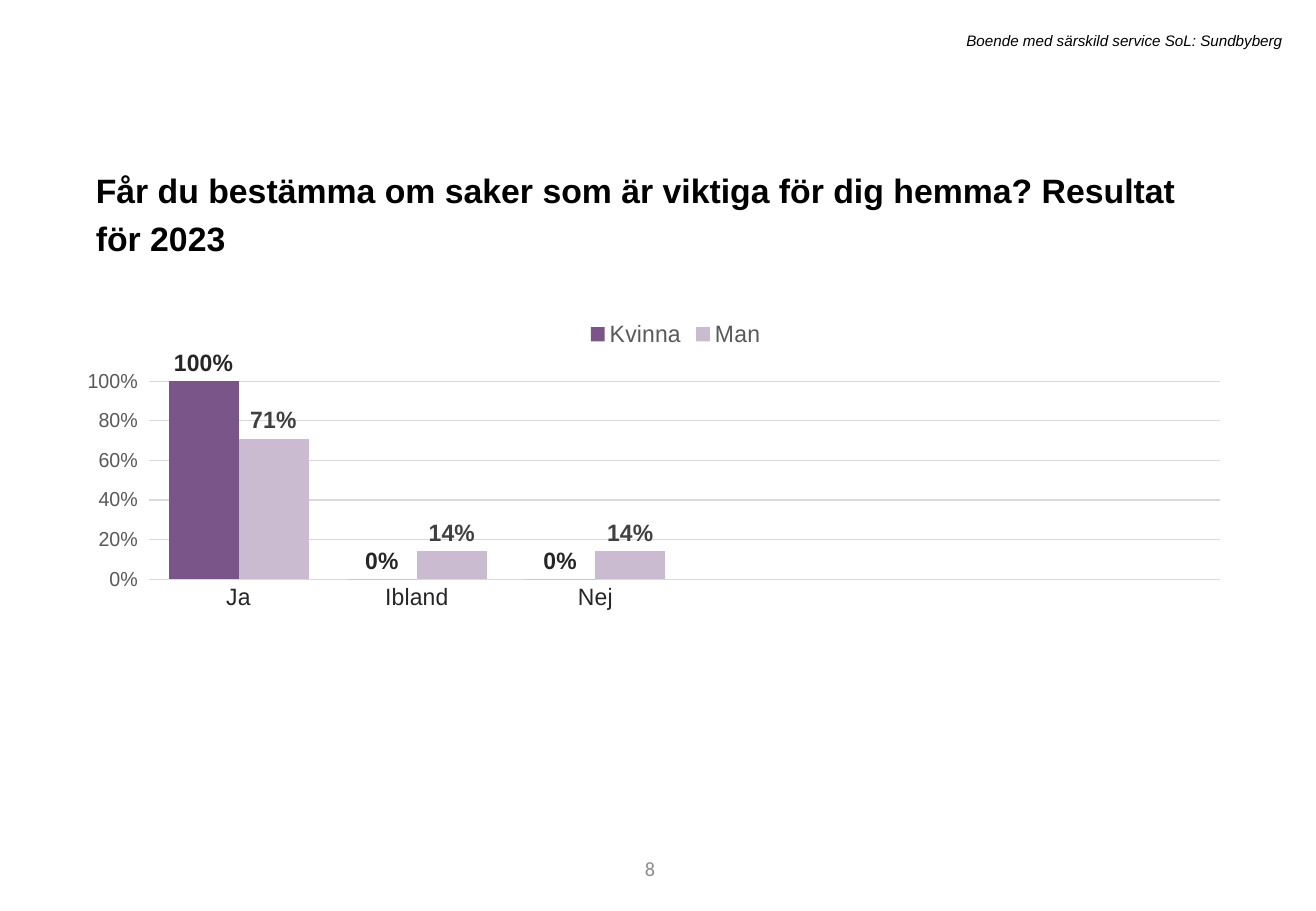
from dataclasses import dataclass

from pptx import Presentation
from pptx.chart.data import CategoryChartData
from pptx.dml.color import RGBColor
from pptx.enum.chart import XL_CHART_TYPE, XL_LABEL_POSITION, XL_LEGEND_POSITION, XL_TICK_MARK
from pptx.enum.text import MSO_ANCHOR, MSO_AUTO_SIZE, PP_ALIGN
from pptx.oxml import parse_xml
from pptx.oxml.ns import nsdecls
from pptx.util import Inches, Pt


@dataclass(frozen=True)
class Theme:
    """Fonts, colours and type sizes of the slide."""

    font: str = "Arial"
    number_font: str = "Calibri"
    black: str = "000000"
    dark: str = "262626"
    medium: str = "404040"
    grey: str = "595959"
    pale: str = "8C8C8C"
    grid: str = "D9D9D9"
    woman: str = "7A5589"
    man: str = "CABBD0"
    title_size: int = 20
    label_size: int = 14
    axis_size: int = 12
    base_size: int = 10
    header_size: int = 9


THEME = Theme()
CATEGORIES = ("Ja", "Ibland", "Nej", "", "", "")
SERIES = (
    ("Kvinna", (1, 0, 0), THEME.woman, THEME.dark),
    ("Man", (0.71, 0.14, 0.14), THEME.man, THEME.medium),
)
PLOT_LAYOUT = {"x": 0.025, "y": 0.154, "w": 0.966, "h": 0.413}


def style_font(font, size, color, name=THEME.font, bold=False, italic=False):
    """Set the look of a font."""
    font.name = name
    font.size = Pt(size)
    font.bold = bold
    font.italic = italic
    font.color.rgb = RGBColor.from_string(color)


def style_line(line, color):
    """Give an axis or gridline a thin solid stroke."""
    line.color.rgb = RGBColor.from_string(color)
    line.width = Pt(0.75)


def add_text(page, text, left, top, width, height, align=PP_ALIGN.LEFT,
             anchor=MSO_ANCHOR.TOP, grow=True, line_spacing=None, space_before=None, **font):
    """Add a wrapped text box with one paragraph."""
    box = page.shapes.add_textbox(Inches(left), Inches(top), Inches(width), Inches(height))
    frame = box.text_frame
    frame.word_wrap = True
    frame.auto_size = MSO_AUTO_SIZE.SHAPE_TO_FIT_TEXT if grow else MSO_AUTO_SIZE.NONE
    frame.vertical_anchor = anchor
    para = frame.paragraphs[0]
    para.alignment = align
    para.line_spacing = line_spacing
    para.space_before = space_before
    span = para.add_run()
    span.text = text
    style_font(span.font, **font)


def set_plot_layout(chart, layout):
    """Fix the inner plot area as fractions of the chart."""
    plot_area = chart.element.xpath("c:chart/c:plotArea")[0]
    for old in plot_area.xpath("c:layout"):
        plot_area.remove(old)
    modes = '<c:xMode val="edge"/><c:yMode val="edge"/>'
    sizes = "".join(f'<c:{key} val="{value}"/>' for key, value in layout.items())
    plot_area.insert(0, parse_xml(
        f'<c:layout {nsdecls("c")}><c:manualLayout><c:layoutTarget val="inner"/>'
        f"{modes}{sizes}</c:manualLayout></c:layout>"))


def style_axes(chart):
    """Format the category and percentage axes."""
    category = chart.category_axis
    category.major_tick_mark = category.minor_tick_mark = XL_TICK_MARK.NONE
    style_font(category.tick_labels.font, THEME.label_size, THEME.dark)
    style_line(category.format.line, THEME.grid)
    value = chart.value_axis
    value.minimum_scale, value.maximum_scale, value.major_unit = 0, 1, 0.2
    value.major_tick_mark = XL_TICK_MARK.OUTSIDE
    value.minor_tick_mark = XL_TICK_MARK.NONE
    value.tick_labels.number_format = "0%"
    value.tick_labels.number_format_is_linked = False
    style_font(value.tick_labels.font, THEME.axis_size, THEME.grey)
    value.format.line.fill.background()
    value.has_major_gridlines = True
    style_line(value.major_gridlines.format.line, THEME.grid)


def style_series(series, color, label_color):
    """Colour the bars and show their values above them."""
    series.format.fill.solid()
    series.format.fill.fore_color.rgb = RGBColor.from_string(color)
    series.invert_if_negative = False
    labels = series.data_labels
    labels.show_value = True
    labels.position = XL_LABEL_POSITION.OUTSIDE_END
    labels.number_format = "0%"
    labels.number_format_is_linked = False
    style_font(labels.font, THEME.label_size, label_color, bold=True)


def add_answer_chart(page, left, top, width, height):
    """Add the clustered columns of answers by gender."""
    data = CategoryChartData(number_format="0%")
    data.categories = CATEGORIES
    for name, values, _, _ in SERIES:
        data.add_series(name, values)
    chart = page.shapes.add_chart(
        XL_CHART_TYPE.COLUMN_CLUSTERED, Inches(left), Inches(top),
        Inches(width), Inches(height), data).chart
    style_font(chart.font, THEME.base_size, THEME.black)
    chart.has_title = False
    chart.has_legend = True
    chart.legend.position = XL_LEGEND_POSITION.TOP
    chart.legend.include_in_layout = False
    style_font(chart.legend.font, THEME.label_size, THEME.grey)
    style_axes(chart)
    set_plot_layout(chart, PLOT_LAYOUT)
    plot = chart.plots[0]
    plot.gap_width = 55
    plot.vary_by_categories = False
    for series, (_, _, color, label_color) in zip(plot.series, SERIES):
        style_series(series, color, label_color)


def main():
    """Build the slide and save the deck."""
    deck = Presentation()
    deck.slide_width, deck.slide_height = Inches(10.83), Inches(7.5)
    page = deck.slides.add_slide(deck.slide_layouts[6])
    add_text(page, "8", 3.05, 6.95, 2.44, 0.4, align=PP_ALIGN.RIGHT,
             anchor=MSO_ANCHOR.MIDDLE, grow=False,
             size=THEME.axis_size, color=THEME.pale, name=THEME.number_font)
    add_answer_chart(page, 0.72, 2.53, 9.4, 3.95)
    add_text(page, "Får du bestämma om saker som är viktiga för dig hemma? Resultat för 2023",
             0.69, 1.28, 9.4, 0.47, line_spacing=1.2, space_before=Pt(10),
             size=THEME.title_size, color=THEME.black, bold=True)
    add_text(page, "Boende med särskild service SoL: Sundbyberg",
             1.79, 0.21, 8.86, 0.25, align=PP_ALIGN.RIGHT,
             size=THEME.header_size, color=THEME.black, italic=True)
    deck.save("out.pptx")


if __name__ == "__main__":
    main()
